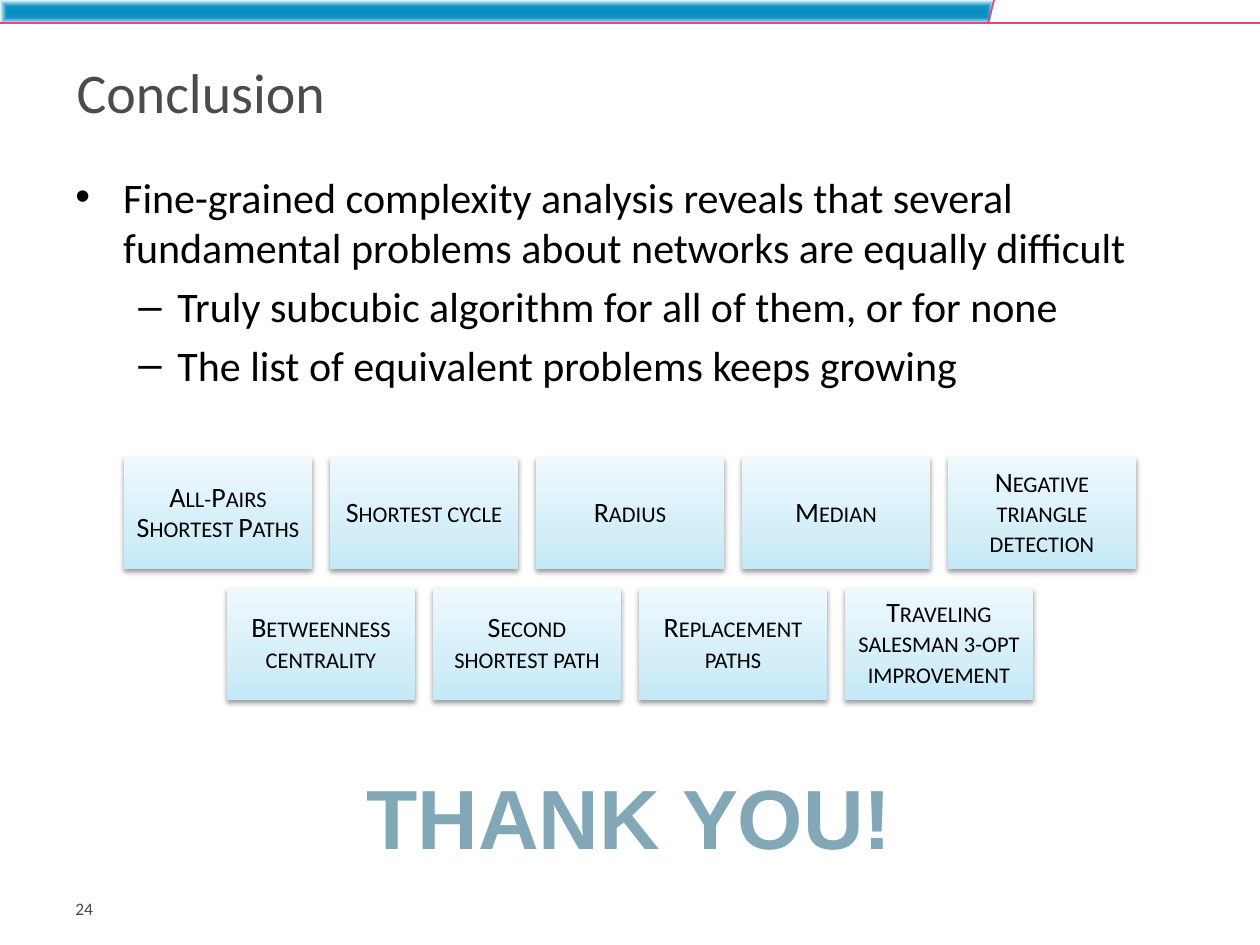
from dataclasses import dataclass

from lxml import etree
from pptx import Presentation
from pptx import util as u
from pptx.dml.color import RGBColor
from pptx.enum import shapes, text
from pptx.oxml import parse_xml
from pptx.oxml.ns import nsdecls, qn

COLORS = {
    "title": "4E4A48",
    "black": "000000",
    "accent": "E2497F",
}
BAR_STOPS = [(0, "038CC0"), (49, "0F94C4"), (100, "EEF9FD")]
CARD_STOPS = [(0, "C3E8F6"), (35, "D4EEF8"), (100, "EEF9FD")]
THANKS_STOPS = [(0, "9BBBC7"), (49, "82A8B7"), (50, "799EAB"),
                (92, "6E8C97"), (100, "6C8A94")]
LINEAR = '<a:lin ang="{}" scaled="0"/>'
TO_CENTER = ('<a:path path="shape"><a:fillToRect l="50000" t="50000" '
             'r="50000" b="50000"/></a:path>')

# Card grid: rows are centred, the longest row spans GRID_WIDTH
CARD_ROWS = [
    ["All-Pairs Shortest Paths", "Shortest cycle", "Radius", "Median",
     "Negative triangle detection"],
    ["Betweenness centrality", "Second shortest path", "Replacement paths",
     "Traveling salesman 3-opt improvement"],
]
SLIDE_WIDTH, SLIDE_HEIGHT = 10, 7.5
GRID_WIDTH, GRID_TOP = 8.03, 3.63
CARD_WIDTH, CARD_HEIGHT = 1.49, 0.89
GAP = (GRID_WIDTH - 5 * CARD_WIDTH) / 4


@dataclass
class Box:
    left: float
    top: float
    width: float
    height: float

    def lengths(self) -> list:
        return [u.Inches(v) for v in (self.left, self.top, self.width, self.height)]


@dataclass
class Bullet:
    words: str
    mark: str
    level: int
    margin: float
    indent: float
    before: float


BULLETS = [
    Bullet("Fine-grained complexity analysis reveals that several fundamental "
           "problems about networks are equally difficult", "•", 0, 0.38, -0.38, 0),
    Bullet("Truly subcubic algorithm for all of them, or for none",
           "–", 1, 0.81, -0.31, 4.8),
    Bullet("The list of equivalent problems keeps growing",
           "–", 1, 0.81, -0.31, 4.8),
]


def set_gradient(parent, stops: list, direction: str) -> None:
    """Replace the empty fill of an element by a gradient."""
    stop_xml = "".join(
        f'<a:gs pos="{position * 1000}"><a:srgbClr val="{color}"/></a:gs>'
        for position, color in stops)
    gradient = parse_xml(f'<a:gradFill {nsdecls("a")} rotWithShape="1">'
                         f'<a:gsLst>{stop_xml}</a:gsLst>{direction}</a:gradFill>')
    parent.replace(parent.find(qn("a:noFill")), gradient)


def fill_shape(shape, stops: list, direction: str) -> None:
    shape.shadow.inherit = False
    shape.fill.background()
    set_gradient(shape._element.spPr, stops, direction)
    shape.line.fill.background()


def set_font(paragraph, size: float, color: str, name: str = "Calibri") -> None:
    paragraph.font.size = u.Pt(size)
    paragraph.font.name = name
    paragraph.font.color.rgb = RGBColor.from_string(COLORS[color])


def add_text_frame(slide, box: Box):
    frame = slide.shapes.add_textbox(*box.lengths()).text_frame
    frame.word_wrap = True
    return frame


def add_accent_line(slide, *ends: float) -> None:
    line = slide.shapes.add_connector(shapes.MSO_CONNECTOR.STRAIGHT,
                                      *[u.Inches(end) for end in ends])
    line.line.color.rgb = RGBColor.from_string(COLORS["accent"])
    line.line.width = u.Pt(1)
    etree.SubElement(line._element.spPr, qn("a:effectLst"))


def add_header(slide) -> None:
    # Outline in hundredths of an inch: freeform points are whole numbers
    builder = slide.shapes.build_freeform(0, 0, scale=u.Inches(0.01))
    builder.add_line_segments([(789, 0), (785, 19), (0, 19)], close=True)
    fill_shape(builder.convert_to_shape(), BAR_STOPS, TO_CENTER)
    add_accent_line(slide, 7.89, 0, 7.84, 0.19)
    add_accent_line(slide, SLIDE_WIDTH, 0.18, 0, 0.18)


def add_bullets(slide, box: Box) -> None:
    frame = add_text_frame(slide, box)
    for index, bullet in enumerate(BULLETS):
        paragraph = frame.add_paragraph() if index else frame.paragraphs[0]
        paragraph.text = bullet.words
        paragraph.level = bullet.level
        paragraph.space_before = u.Pt(bullet.before)
        properties = paragraph._p.get_or_add_pPr()
        properties.set("marL", str(u.Inches(bullet.margin)))
        properties.set("indent", str(u.Inches(bullet.indent)))
        etree.SubElement(properties, qn("a:buFont")).set("typeface", "Arial")
        etree.SubElement(properties, qn("a:buChar")).set("char", bullet.mark)
        set_font(paragraph, 24, "black")


def add_card(slide, box: Box, label: str) -> None:
    card = slide.shapes.add_shape(shapes.MSO_SHAPE.RECTANGLE, *box.lengths())
    fill_shape(card, CARD_STOPS, LINEAR.format(270 * 60000))
    card._element.spPr.find(qn("a:effectLst")).append(parse_xml(
        f'<a:outerShdw {nsdecls("a")} blurRad="{u.Pt(3.1)}" dist="{u.Pt(1.6)}" '
        f'dir="5400000" rotWithShape="0"><a:srgbClr val="{COLORS["black"]}">'
        '<a:alpha val="38000"/></a:srgbClr></a:outerShdw>'))
    frame = card.text_frame
    frame.word_wrap = True
    frame.vertical_anchor = text.MSO_ANCHOR.MIDDLE
    frame.margin_left = frame.margin_right = u.Inches(0.07)
    frame.margin_top = frame.margin_bottom = u.Inches(0.07)
    paragraph = frame.paragraphs[0]
    run = paragraph.add_run()
    run.text = label
    run._r.get_or_add_rPr().set("cap", "small")
    paragraph.alignment = text.PP_ALIGN.CENTER
    paragraph.line_spacing = 0.9
    paragraph.space_after = u.Pt(5.6)
    set_font(paragraph, 16, "black")


def add_cards(slide) -> None:
    for row, labels in enumerate(CARD_ROWS):
        row_width = len(labels) * (CARD_WIDTH + GAP) - GAP
        left = (SLIDE_WIDTH - row_width) / 2
        top = GRID_TOP + row * (CARD_HEIGHT + GAP)
        for column, label in enumerate(labels):
            add_card(slide, Box(left + column * (CARD_WIDTH + GAP), top,
                                CARD_WIDTH, CARD_HEIGHT), label)


def add_thanks(slide, box: Box) -> None:
    paragraph = add_text_frame(slide, box).paragraphs[0]
    paragraph.alignment = text.PP_ALIGN.CENTER
    run = paragraph.add_run()
    run.text = "THANK YOU!"
    run.font.size = u.Pt(48)
    run.font.bold = True
    run.font.name = "Arial"
    run.font.fill.background()
    set_gradient(run._r.get_or_add_rPr(), THANKS_STOPS, LINEAR.format(90 * 60000))


def main() -> None:
    presentation = Presentation()
    presentation.slide_width = u.Inches(SLIDE_WIDTH)
    presentation.slide_height = u.Inches(SLIDE_HEIGHT)
    slide = presentation.slides.add_slide(presentation.slide_layouts[6])

    add_header(slide)

    # Title
    title = add_text_frame(slide, Box(0.51, 0.38, 9, 0.69))
    title.vertical_anchor = text.MSO_ANCHOR.MIDDLE
    title.text = "Conclusion"
    set_font(title.paragraphs[0], 32, "title")

    add_bullets(slide, Box(0.5, 1.31, 9.3, 5.39))

    # Slide number
    number = add_text_frame(slide, Box(0.5, 7.13, 2.14, 0.3))
    number.margin_top = 0
    number.text = "24"
    set_font(number.paragraphs[0], 10, "title")

    add_thanks(slide, Box(0.98, 6.03, 8.03, 1.72))
    add_cards(slide)
    presentation.save("out.pptx")


if __name__ == "__main__":
    main()
